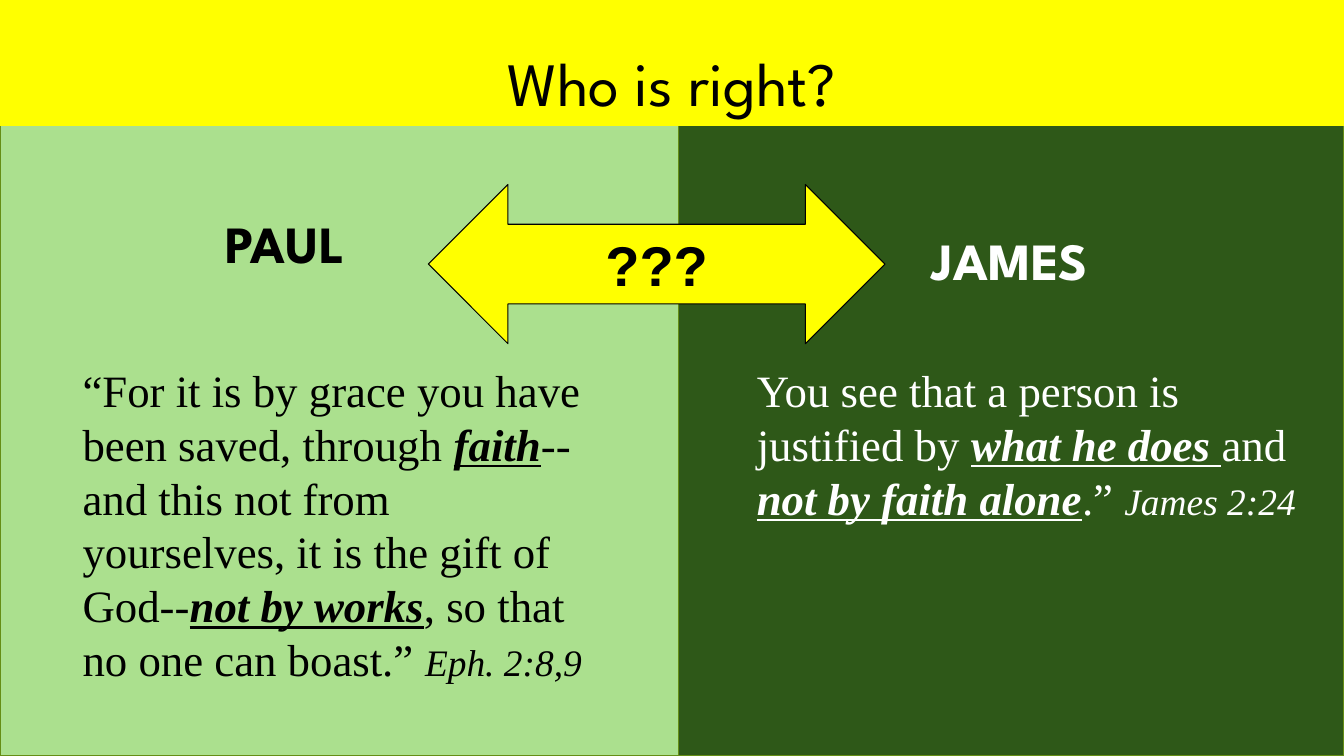
from dataclasses import dataclass

from pptx import Presentation
from pptx.dml.color import RGBColor
from pptx.enum import shapes, text
from pptx.util import Pt


@dataclass(frozen=True)
class Theme:
    """Colours, fonts and type sizes of the slide."""
    yellow: str = "FFFF00"
    light_green: str = "ABE08E"
    dark_green: str = "2E5818"
    edge_green: str = "658E15"
    black: str = "000000"
    white: str = "FFFFFF"
    display: str = "League Spartan"
    serif: str = "Times New Roman"
    sans: str = "Arial"
    title: float = 44
    question: float = 40
    name: float = 37.3
    quote: float = 32
    reference: float = 26.7


def add_run(paragraph, wording, *, font, size, color, bold=False, italic=False, underline=False):
    """Append one formatted run to a paragraph."""
    run = paragraph.add_run()
    run.text = wording
    run.font.name = font
    run.font.size = Pt(size)
    run.font.color.rgb = RGBColor.from_string(color)
    run.font.bold = bold
    run.font.italic = italic
    run.font.underline = underline


class ComparisonSlide:
    """Draws the elements of a two-sided comparison."""

    def __init__(self, presentation, theme):
        self.theme = theme
        self.slide = presentation.slides.add_slide(presentation.slide_layouts[6])

    def block(self, kind, box, fill, line=None, line_width=0.85):
        """Add a filled preset shape."""
        shape = self.slide.shapes.add_shape(kind, *map(Pt, box))
        shape.shadow.inherit = False
        shape.fill.solid()
        shape.fill.fore_color.rgb = RGBColor.from_string(fill)
        if line:
            shape.line.color.rgb = RGBColor.from_string(line)
            shape.line.width = Pt(line_width)
        else:
            shape.line.fill.background()
        return shape

    def label(self, shape, wording, anchor, space_after=0, **style):
        """Write one centred line inside a shape."""
        frame = shape.text_frame
        frame.word_wrap = True
        frame.vertical_anchor = anchor
        frame.margin_left = frame.margin_right = Pt(9.6)
        frame.margin_top = frame.margin_bottom = Pt(4.8)
        paragraph = frame.paragraphs[0]
        paragraph.alignment = text.PP_ALIGN.CENTER
        paragraph.space_after = Pt(space_after)
        add_run(paragraph, wording, **style)

    def text_box(self, box):
        """Add a wrapping text box and return its paragraph."""
        frame = self.slide.shapes.add_textbox(*map(Pt, box)).text_frame
        frame.word_wrap = True
        return frame.paragraphs[0]

    def name(self, wording, left, top, color):
        """Add the centred name of a speaker."""
        paragraph = self.text_box((left, top, 231.84, 52.56))
        paragraph.alignment = text.PP_ALIGN.CENTER
        add_run(paragraph, wording, font=self.theme.display, size=self.theme.name,
                color=color, bold=True)

    def quote(self, box, parts, reference, color):
        """Add a quotation whose odd parts are stressed, then its reference."""
        paragraph = self.text_box(box)
        style = {"font": self.theme.serif, "color": color}
        for index, part in enumerate(parts):
            stressed = index % 2 == 1
            add_run(paragraph, part, size=self.theme.quote, bold=stressed,
                    italic=stressed, underline=stressed, **style)
        add_run(paragraph, reference, size=self.theme.reference, italic=True, **style)


def main():
    """Build and save the presentation."""
    theme = Theme()
    presentation = Presentation()
    presentation.slide_width, presentation.slide_height = Pt(960), Pt(540)
    page = ComparisonSlide(presentation, theme)
    rectangle = shapes.MSO_SHAPE.RECTANGLE

    page.block(rectangle, (0, 0, 486, 540), theme.light_green, theme.edge_green)
    page.block(rectangle, (484.5, 0, 475.5, 540), theme.dark_green, theme.edge_green)
    title = page.block(rectangle, (0, 0, 960, 90), theme.yellow)
    page.label(title, "Who is right?", text.MSO_ANCHOR.BOTTOM,
               font=theme.display, size=theme.title, color=theme.black)

    page.quote((51.84, 255.6, 375.84, 278.64),
               ["“For it is by grace you have been saved, through ", "faith",
                "-- and this not from yourselves, it is the gift of God--",
                "not by works", ", so that no one can boast.” "],
               "Eph. 2:8,9", theme.black)
    page.quote((533.52, 255.6, 403.92, 162),
               ["You see that a person is justified by ", "what he does ", "and ",
                "not by faith alone", ".” "],
               "James 2:24", theme.white)
    page.name("PAUL", 87.84, 147.6, theme.black)
    page.name("JAMES", 605.52, 159.84, theme.white)

    arrow = page.block(shapes.MSO_SHAPE.LEFT_RIGHT_ARROW, (306, 131.76, 326.16, 113.76),
                       theme.yellow, theme.black, 0.75)
    page.label(arrow, "???", text.MSO_ANCHOR.MIDDLE, space_after=8,
               font=theme.sans, size=theme.question, color=theme.black, bold=True)

    presentation.save("out.pptx")


if __name__ == "__main__":
    main()
